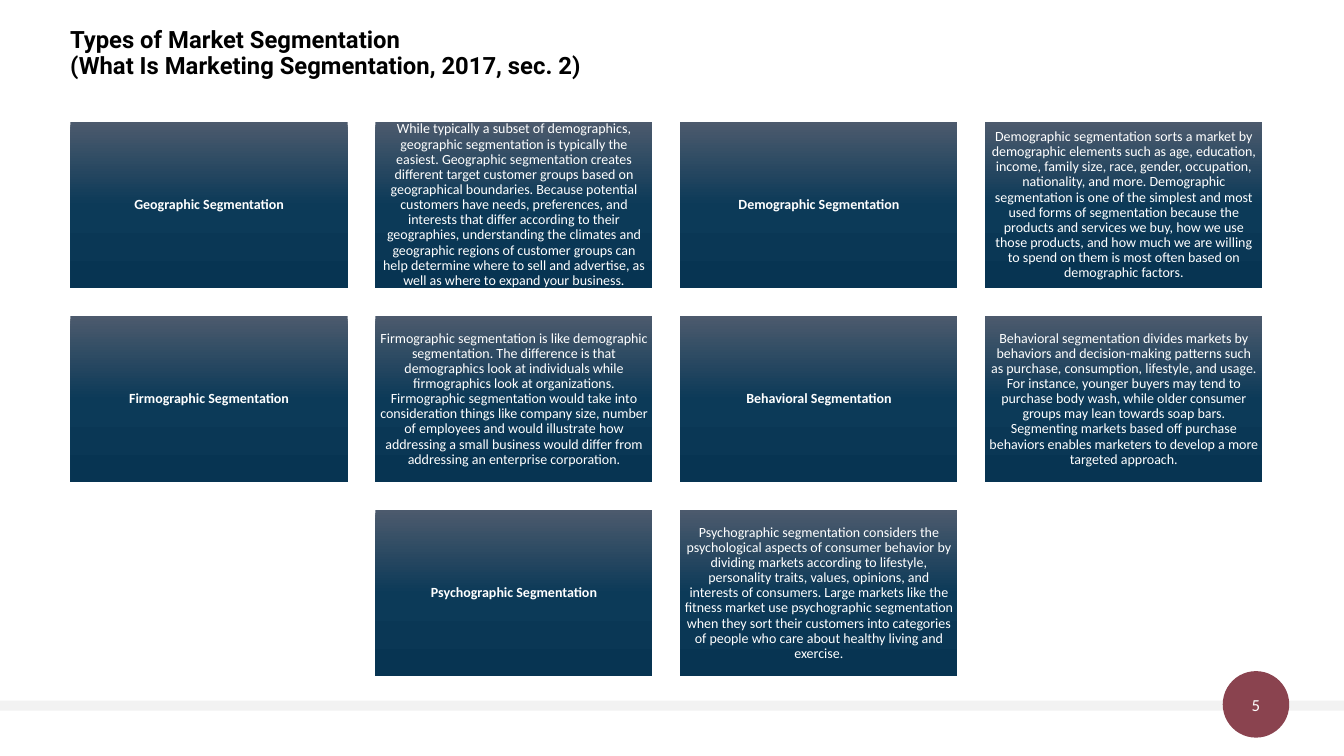
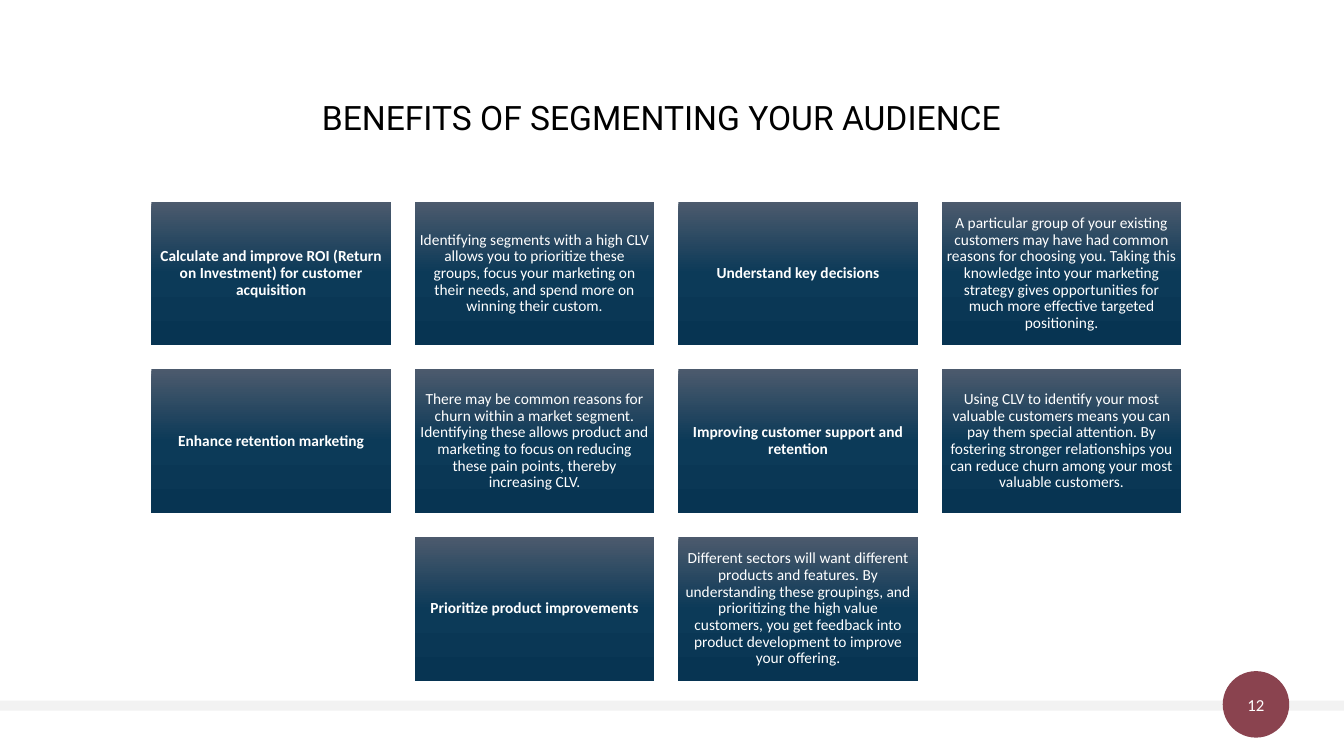
from copy import deepcopy
from dataclasses import dataclass

from pptx import Presentation
from pptx.dml.color import RGBColor
from pptx.enum.shapes import MSO_SHAPE
from pptx.enum.text import MSO_ANCHOR, MSO_AUTO_SIZE, PP_ALIGN
from pptx.oxml.ns import qn
from pptx.util import Pt


@dataclass(frozen=True)
class Theme:
    title_font: str = "Roboto"
    body_font: str = "Calibri"
    title_color: str = "000000"
    text_color: str = "FFFFFF"
    band: str = "F2F2F2"
    badge: str = "8A434F"
    card_gradient: tuple = ((0, "4C5A6D"), (0.5, "0C3A58"), (1, "073452"))
    number_size: int = 12
    line_spacing: float = 0.9


@dataclass(frozen=True)
class Grid:
    top: float
    card_width: float
    inset: float
    text_size: int


THEME = Theme()
SLIDE_WIDTH, SLIDE_HEIGHT = 960, 540
CONTENT_LEFT, CONTENT_WIDTH = 50, 852
COLUMNS = 4
CARD_ASPECT = 0.6
GAP_RATIO = 0.1

SEGMENT_TYPES = [
    ("Geographic Segmentation",
     "While typically a subset of demographics, geographic segmentation is typically the easiest. "
     "Geographic segmentation creates different target customer groups based on geographical "
     "boundaries. Because potential customers have needs, preferences, and interests that differ "
     "according to their geographies, understanding the climates and geographic regions of customer "
     "groups can help determine where to sell and advertise, as well as where to expand your business."),
    ("Demographic Segmentation",
     "Demographic segmentation sorts a market by demographic elements such as age, education, income, "
     "family size, race, gender, occupation, nationality, and more. Demographic segmentation is one of "
     "the simplest and most used forms of segmentation because the products and services we buy, how we "
     "use those products, and how much we are willing to spend on them is most often based on "
     "demographic factors."),
    ("Firmographic Segmentation",
     "Firmographic segmentation is like demographic segmentation. The difference is that demographics "
     "look at individuals while firmographics look at organizations. Firmographic segmentation would "
     "take into consideration things like company size, number of employees and would illustrate how "
     "addressing a small business would differ from addressing an enterprise corporation."),
    ("Behavioral Segmentation",
     "Behavioral segmentation divides markets by behaviors and decision-making patterns such as "
     "purchase, consumption, lifestyle, and usage. For instance, younger buyers may tend to purchase "
     "body wash, while older consumer groups may lean towards soap bars. Segmenting markets based off "
     "purchase behaviors enables marketers to develop a more targeted approach."),
    ("Psychographic Segmentation",
     "Psychographic segmentation considers the psychological aspects of consumer behavior by dividing "
     "markets according to lifestyle, personality traits, values, opinions, and interests of consumers. "
     "Large markets like the fitness market use psychographic segmentation when they sort their "
     "customers into categories of people who care about healthy living and exercise."),
]

BENEFITS = [
    ("Calculate and improve ROI (Return on Investment) for customer acquisition",
     "Identifying segments with a high CLV allows you to prioritize these groups, focus your marketing "
     "on their needs, and spend more on winning their custom."),
    ("Understand key decisions",
     "A particular group of your existing customers may have had common reasons for choosing you. "
     "Taking this knowledge into your marketing strategy gives opportunities for much more effective "
     "targeted positioning."),
    ("Enhance retention marketing",
     "There may be common reasons for churn within a market segment. Identifying these allows product "
     "and marketing to focus on reducing these pain points, thereby increasing CLV."),
    ("Improving customer support and retention",
     "Using CLV to identify your most valuable customers means you can pay them special attention. By "
     "fostering stronger relationships you can reduce churn among your most valuable customers."),
    ("Prioritize product improvements",
     "Different sectors will want different products and features. By understanding these groupings, "
     "and prioritizing the high value customers, you get feedback into product development to improve "
     "your offering."),
]


def style_paragraph(paragraph, font_name, size, color, bold=False, align=PP_ALIGN.CENTER):
    paragraph.alignment = align
    paragraph.font.name = font_name
    paragraph.font.size = Pt(size)
    paragraph.font.bold = bold
    paragraph.font.color.rgb = RGBColor.from_string(color)


def set_insets(frame, left, top, right, bottom):
    frame.margin_left, frame.margin_top = Pt(left), Pt(top)
    frame.margin_right, frame.margin_bottom = Pt(right), Pt(bottom)


def add_plain_shape(slide, preset, left, top, width, height):
    shape = slide.shapes.add_shape(preset, Pt(left), Pt(top), Pt(width), Pt(height))
    shape.shadow.inherit = False
    shape.line.fill.background()
    return shape


def fill_solid(shape, color):
    shape.fill.solid()
    shape.fill.fore_color.rgb = RGBColor.from_string(color)


def fill_gradient(shape, stops):
    shape.fill.gradient()
    shape.fill.gradient_angle = 270
    stop_list = shape.element.spPr.find(qn("a:gradFill")).find(qn("a:gsLst"))
    while len(stop_list) < len(stops):
        stop_list.append(deepcopy(stop_list[-1]))
    for stop, (position, color) in zip(shape.fill.gradient_stops, stops):
        stop.position = position
        stop.color.rgb = RGBColor.from_string(color)


def write_centered(shape, text, size, inset=0, bold=False):
    frame = shape.text_frame
    frame.word_wrap = True
    frame.vertical_anchor = MSO_ANCHOR.MIDDLE
    set_insets(frame, inset, inset, inset, inset)
    frame.text = text
    style_paragraph(frame.paragraphs[0], THEME.body_font, size, THEME.text_color, bold)
    return frame.paragraphs[0]


def add_footer(slide, number):
    band = add_plain_shape(slide, MSO_SHAPE.RECTANGLE, 0, 500.4, SLIDE_WIDTH, 7.2)
    fill_solid(band, THEME.band)
    badge = add_plain_shape(slide, MSO_SHAPE.OVAL, 873.4, 479.4, 47.5, 47.5)
    fill_solid(badge, THEME.badge)
    write_centered(badge, str(number), THEME.number_size)


def set_title(slide, text, top, height, size, bold, align):
    title = slide.shapes.title
    title.left, title.top = Pt(CONTENT_LEFT), Pt(top)
    title.width, title.height = Pt(CONTENT_WIDTH), Pt(height)
    frame = title.text_frame
    frame.auto_size = MSO_AUTO_SIZE.NONE
    frame.word_wrap = True
    frame.vertical_anchor = MSO_ANCHOR.TOP
    set_insets(frame, 0, 3.6, 7.2, 3.6)
    frame.text = text
    heading = frame.paragraphs[0]
    heading.line_spacing = THEME.line_spacing
    style_paragraph(heading, THEME.title_font, size, THEME.title_color, bold, align)


def add_card(slide, text, left, top, grid, bold):
    card = add_plain_shape(slide, MSO_SHAPE.RECTANGLE, left, top,
                           grid.card_width, grid.card_width * CARD_ASPECT)
    fill_gradient(card, THEME.card_gradient)
    paragraph = write_centered(card, text, grid.text_size, grid.inset, bold)
    paragraph.line_spacing = THEME.line_spacing


def add_card_grid(slide, topics, grid):
    cards = [(text, bold) for name, detail in topics
             for text, bold in ((name, True), (detail, False))]
    gap = grid.card_width * GAP_RATIO
    row_pitch = grid.card_width * CARD_ASPECT + gap
    center = CONTENT_LEFT + CONTENT_WIDTH / 2
    for row, start in enumerate(range(0, len(cards), COLUMNS)):
        row_cards = cards[start:start + COLUMNS]
        row_width = len(row_cards) * (grid.card_width + gap) - gap
        for column, (text, bold) in enumerate(row_cards):
            left = center - row_width / 2 + column * (grid.card_width + gap)
            add_card(slide, text, left, grid.top + row * row_pitch, grid, bold)


def add_slide(deck, number):
    slide = deck.slides.add_slide(deck.slide_layouts.get_by_name("Title Only"))
    add_footer(slide, number)
    return slide


def main():
    deck = Presentation()
    deck.slide_width, deck.slide_height = Pt(SLIDE_WIDTH), Pt(SLIDE_HEIGHT)

    types = add_slide(deck, 5)
    set_title(types, "Types of Market Segmentation\v(What Is Marketing Segmentation, 2017, sec. 2)",
              top=16.6, height=60, size=17, bold=True, align=PP_ALIGN.LEFT)
    add_card_grid(types, SEGMENT_TYPES, Grid(top=87.1, card_width=198, inset=3, text_size=10))

    benefits = add_slide(deck, 12)
    set_title(benefits, "BENEFITS OF SEGMENTING YOUR AUDIENCE",
              top=69.2, height=40, size=24, bold=False, align=PP_ALIGN.CENTER)
    add_card_grid(benefits, BENEFITS, Grid(top=144, card_width=171.1, inset=3.3, text_size=11))

    deck.save("out.pptx")


if __name__ == "__main__":
    main()
